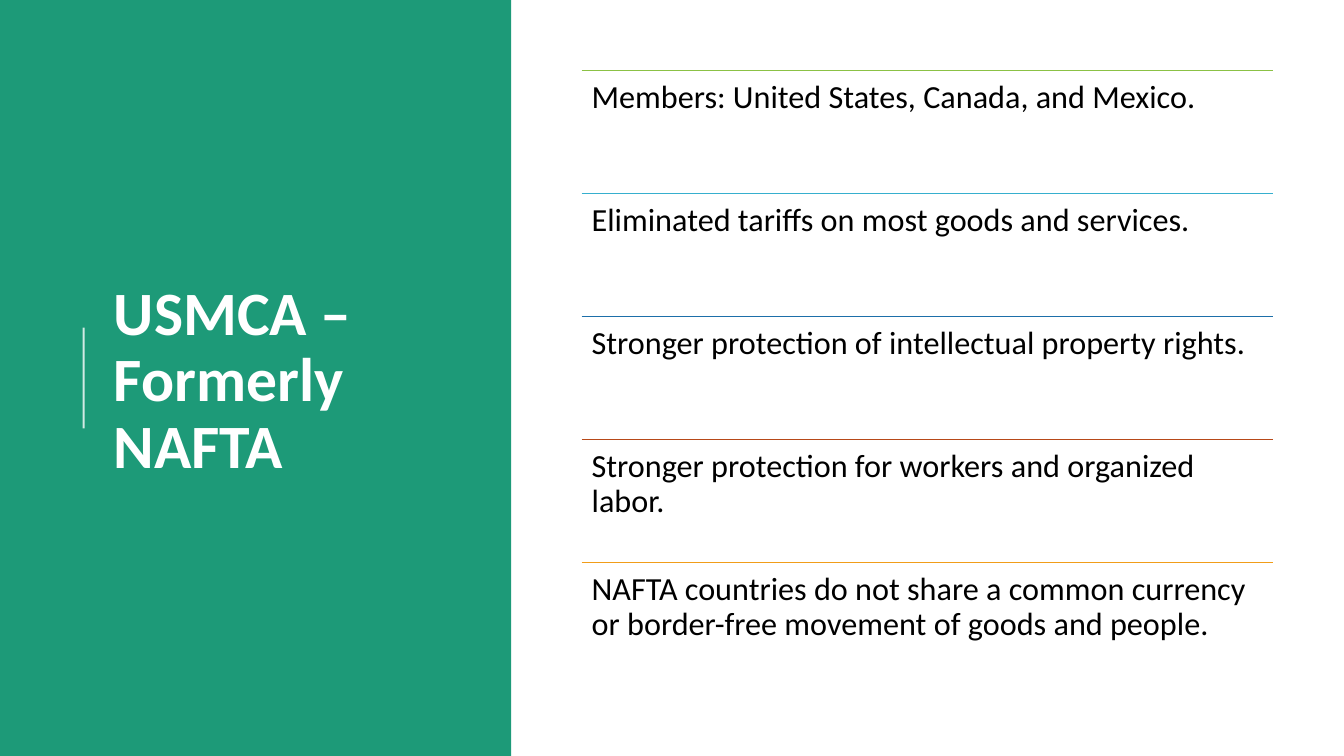
from dataclasses import dataclass

from lxml import etree
from pptx import Presentation
from pptx import util as u
from pptx.dml.color import RGBColor
from pptx.enum import shapes, text
from pptx.oxml import ns
from pptx.shapes.connector import Connector
from pptx.slide import Slide
from pptx.text.text import TextFrame

WHITE = RGBColor(0xFF, 0xFF, 0xFF)
BLACK = RGBColor(0x00, 0x00, 0x00)
TEAL = RGBColor(0x1D, 0x9A, 0x78)
GREEN = RGBColor(0x8B, 0xC1, 0x45)
SKY = RGBColor(0x36, 0xAF, 0xCE)
BLUE = RGBColor(0x1D, 0x6F, 0xA9)
RUST = RGBColor(0xB7, 0x49, 0x19)
AMBER = RGBColor(0xF1, 0x9D, 0x19)

FONT = "Calibri"
ROW_LEFT, ROW_TOP = 5.77, 0.7
ROW_WIDTH, ROW_HEIGHT = 6.86, 1.22


@dataclass(frozen=True)
class Fact:
    wording: str
    color: RGBColor


FACTS = [
    Fact("Members: United States, Canada, and Mexico.", GREEN),
    Fact("Eliminated tariffs on most goods and services.", SKY),
    Fact("Stronger protection of intellectual property rights.", BLUE),
    Fact("Stronger protection for workers and organized labor.", RUST),
    Fact("NAFTA countries do not share a common currency or border-free "
         "movement of goods and people.", AMBER),
]


def write(frame: TextFrame, wording: str, size: float, color: RGBColor,
          bold: bool = False) -> None:
    frame.text = wording
    frame.word_wrap = True
    frame.auto_size = text.MSO_AUTO_SIZE.NONE
    para = frame.paragraphs[0]
    para.alignment = text.PP_ALIGN.LEFT
    para.line_spacing = 0.9
    font = para.runs[0].font
    font.name, font.size, font.bold = FONT, u.Pt(size), bold
    font.color.rgb = color


def add_line(page: Slide, start: tuple[float, float], end: tuple[float, float],
             color: RGBColor, width: float) -> Connector:
    line = page.shapes.add_connector(
        shapes.MSO_CONNECTOR.STRAIGHT,
        *(u.Inches(value) for value in (*start, *end)))
    line.line.color.rgb = color
    line.line.width = u.Pt(width)
    etree.SubElement(line.element.spPr, ns.qn("a:effectLst"))
    return line


def add_fact(page: Slide, fact: Fact, top: float) -> None:
    add_line(page, (ROW_LEFT, top), (ROW_LEFT + ROW_WIDTH, top), fact.color, 1)
    box = page.shapes.add_textbox(u.Inches(ROW_LEFT), u.Inches(top),
                                  u.Inches(ROW_WIDTH), u.Inches(ROW_HEIGHT))
    frame = box.text_frame
    frame.margin_left = frame.margin_right = u.Inches(0.1)
    frame.margin_top = frame.margin_bottom = u.Inches(0.1)
    write(frame, fact.wording, 23, BLACK)


def main() -> None:
    deck = Presentation()
    deck.slide_width, deck.slide_height = u.Inches(13.33), u.Inches(7.5)
    page = deck.slides.add_slide(deck.slide_layouts.get_by_name("Title Only"))

    # Title on the coloured panel
    title = page.shapes.title
    title.left, title.top = u.Inches(1.03), u.Inches(0.78)
    title.width, title.height = u.Inches(3.69), u.Inches(6.02)
    title.text_frame.vertical_anchor = text.MSO_ANCHOR.MIDDLE
    write(title.text_frame, "USMCA – Formerly NAFTA", 44, WHITE, bold=True)

    panel = page.shapes.add_shape(shapes.MSO_SHAPE.RECTANGLE, 0, 0,
                                  u.Inches(5.07), deck.slide_height)
    panel.shadow.inherit = False
    panel.fill.solid()
    panel.fill.fore_color.rgb = TEAL
    panel.line.fill.background()
    title.element.addprevious(panel.element)

    # Translucent accent beside the title
    accent = add_line(page, (0.83, 4.25), (0.83, 3.25), WHITE, 1.5)
    tint = accent.element.spPr.find(".//" + ns.qn("a:srgbClr"))
    etree.SubElement(tint, ns.qn("a:alpha"), val="80000")

    # Facts, each under its own rule
    for index, fact in enumerate(FACTS):
        add_fact(page, fact, ROW_TOP + index * ROW_HEIGHT)

    deck.save("out.pptx")


if __name__ == "__main__":
    main()
